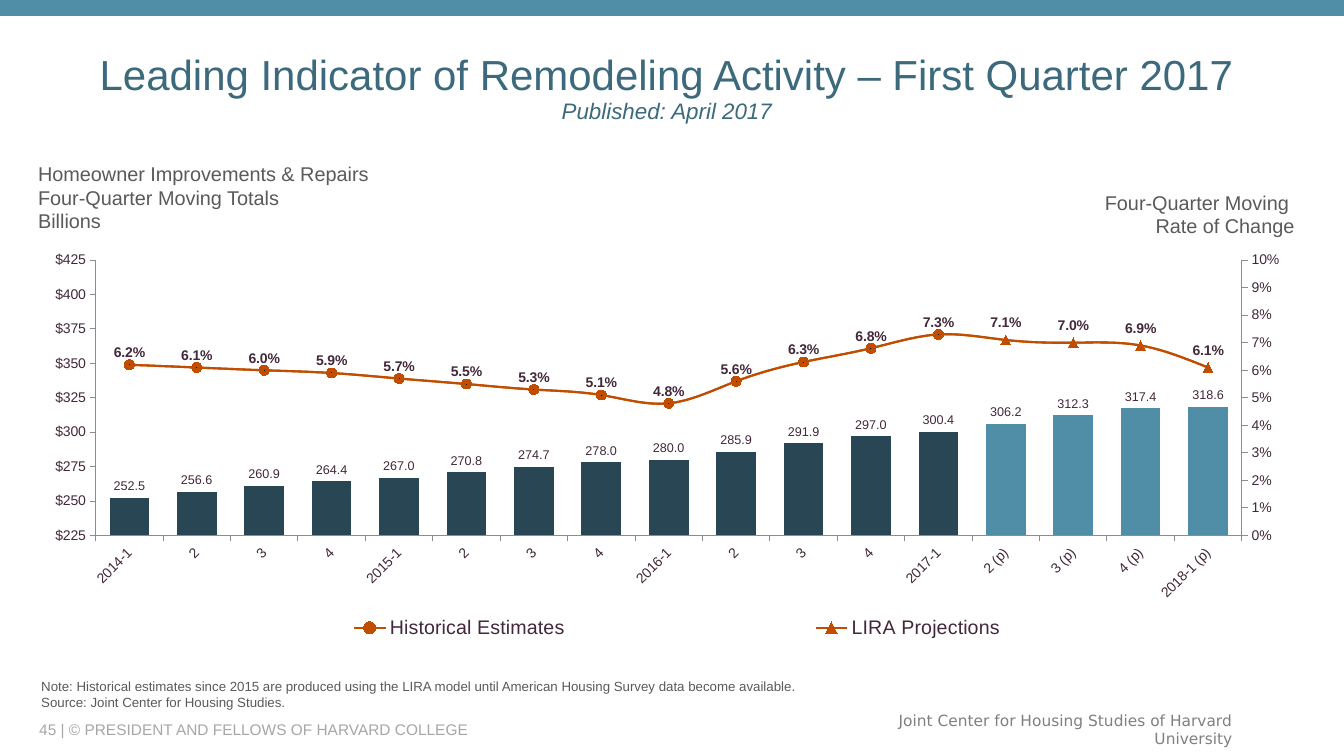
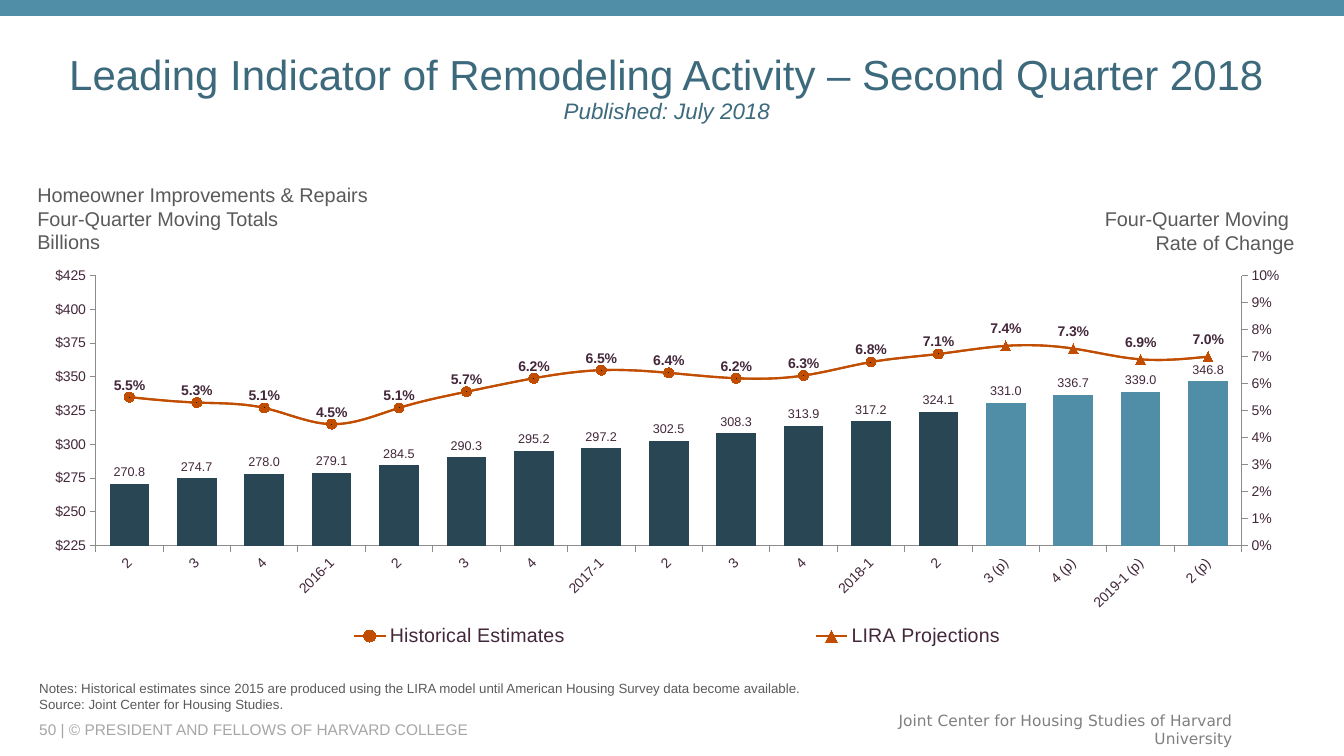
"""Build two slides on the Leading Indicator of Remodeling Activity."""
from pptx import Presentation
from pptx.chart.axis import ValueAxis
from pptx.chart.data import CategoryChartData
from pptx.dml.color import RGBColor
from pptx.enum.chart import (
    XL_CHART_TYPE, XL_LABEL_POSITION, XL_LEGEND_POSITION, XL_MARKER_STYLE, XL_TICK_MARK)
from pptx.enum.shapes import MSO_SHAPE
from pptx.enum.text import MSO_ANCHOR, MSO_AUTO_SIZE, PP_ALIGN
from pptx.oxml import parse_xml
from pptx.oxml.ns import nsdecls
from pptx.util import Cm, Pt

LEFT, CENTER, RIGHT = PP_ALIGN.LEFT, PP_ALIGN.CENTER, PP_ALIGN.RIGHT
TOP, MIDDLE = MSO_ANCHOR.TOP, MSO_ANCHOR.MIDDLE
CIRCLE, TRIANGLE = XL_MARKER_STYLE.CIRCLE, XL_MARKER_STYLE.TRIANGLE
NO_MARKER = XL_MARKER_STYLE.NONE
OUTSIDE = XL_TICK_MARK.OUTSIDE
CLUSTERED = XL_CHART_TYPE.COLUMN_CLUSTERED
ABOVE, OUTSIDE_END = XL_LABEL_POSITION.ABOVE, XL_LABEL_POSITION.OUTSIDE_END
LEGEND_BOTTOM = XL_LEGEND_POSITION.BOTTOM
RECTANGLE = MSO_SHAPE.RECTANGLE
NO_AUTO_SIZE = MSO_AUTO_SIZE.NONE

TEAL = RGBColor(0x50, 0x8D, 0xA6)
TITLE_TEAL = RGBColor(0x3C, 0x6A, 0x7C)
DARK_TEAL = RGBColor(0x28, 0x46, 0x53)
ORANGE = RGBColor(0xC1, 0x4D, 0x00)
PLUM = RGBColor(0x43, 0x27, 0x3A)
TEXT_GREY = RGBColor(0x5A, 0x5A, 0x5A)
AXIS_GREY = RGBColor(0x8C, 0x8C, 0x8C)
FOOTER_GREY = RGBColor(0xA6, 0xA6, 0xA6)
CENTER_GREY = RGBColor(0x80, 0x80, 0x80)

SLIDE_WIDTH, SLIDE_HEIGHT = 33.87, 19.05
MARGIN, CONTENT_WIDTH = 0.74, 32.13
FIRST_PROJECTION = 13
LINE_WIDTH = 1.5
PLOT_AREA = (0.052, 0.04, 0.899, 0.683)
LEGEND_AREA = (0.063, 0.904, 0.89, 0.096)

COPYRIGHT = "© PRESIDENT AND FELLOWS OF HARVARD COLLEGE"
CENTER_NAME = "Joint Center for Housing Studies of Harvard University"
TOTALS_CAPTION = ["Homeowner Improvements & Repairs", "Four-Quarter Moving Totals", "Billions"]
RATE_CAPTION = ["Four-Quarter Moving ", "Rate of Change"]
NOTE = ("Historical estimates since 2015 are produced using the LIRA model "
        "until American Housing Survey data become available.")
SOURCE = "Source: Joint Center for Housing Studies."

SLIDES = [
    {
        "number": 45,
        "title": "Leading Indicator of Remodeling Activity – First Quarter 2017",
        "published": "Published: April 2017",
        "note_label": "Note",
        "totals_at": (0.71, 3.94), "rate_top": 4.67, "note_at": (0.79, 16.97),
        "chart_top": 6.15, "chart_height": 10.16,
        "quarters": ["2014-1", "2", "3", "4", "2015-1", "2", "3", "4", "2016-1", "2", "3", "4",
                     "2017-1", "2 (p)", "3 (p)", "4 (p)", "2018-1 (p)"],
        "totals": [252.5, 256.6, 260.9, 264.4, 267, 270.8, 274.7, 278, 280,
                   285.9, 291.9, 297, 300.4, 306.2, 312.3, 317.4, 318.6],
        "rates": [0.062, 0.061, 0.06, 0.059, 0.057, 0.055, 0.053, 0.051, 0.048,
                  0.056, 0.063, 0.068, 0.073, 0.071, 0.07, 0.069, 0.061],
    },
    {
        "number": 50,
        "title": "Leading Indicator of Remodeling Activity – Second Quarter 2018",
        "published": "Published: July 2018",
        "note_label": "Notes",
        "totals_at": (0.69, 4.47), "rate_top": 5.08, "note_at": (0.74, 17.02),
        "chart_top": 6.55, "chart_height": 9.96,
        "quarters": ["2", "3", "4", "2016-1", "2", "3", "4", "2017-1", "2", "3", "4",
                     "2018-1", "2", "3 (p)", "4 (p)", "2019-1 (p)", "2 (p)"],
        "totals": [270.8, 274.7, 278, 279.1, 284.5, 290.3, 295.2, 297.2, 302.5,
                   308.3, 313.9, 317.2, 324.1, 331, 336.7, 339, 346.8],
        "rates": [0.055, 0.053, 0.051, 0.045, 0.051, 0.057, 0.062, 0.065, 0.064,
                  0.062, 0.063, 0.068, 0.071, 0.074, 0.073, 0.069, 0.07],
    },
]

LINE_CHART = f"""<c:lineChart {nsdecls('c')}>
<c:grouping val="standard"/><c:varyColors val="0"/><c:marker val="1"/>
<c:axId val="5001"/><c:axId val="5002"/></c:lineChart>"""
HIDDEN_AXIS = f"""<c:catAx {nsdecls('c')}><c:axId val="5001"/>
<c:scaling><c:orientation val="minMax"/></c:scaling><c:delete val="1"/>
<c:axPos val="b"/><c:crossAx val="5002"/><c:crosses val="autoZero"/></c:catAx>"""
RATE_AXIS = f"""<c:valAx {nsdecls('c')}><c:axId val="5002"/>
<c:scaling><c:orientation val="minMax"/></c:scaling><c:delete val="0"/>
<c:axPos val="r"/><c:majorTickMark val="out"/><c:minorTickMark val="none"/>
<c:tickLblPos val="nextTo"/><c:crossAx val="5001"/><c:crosses val="max"/></c:valAx>"""
HIDDEN_ENTRY = f"""<c:legendEntry {nsdecls('c')}><c:idx val="0"/><c:delete val="1"/></c:legendEntry>"""


def set_font(font, size, color, name="Arial", bold=False, italic=False):
    font.size, font.name, font.bold, font.italic = Pt(size), name, bold, italic
    font.color.rgb = color


def write_text(frame, lines, size=14.2, color=TEXT_GREY, name="Arial", align=LEFT,
               anchor=TOP, spacing=None):
    frame.word_wrap = True
    frame.auto_size = NO_AUTO_SIZE
    frame.vertical_anchor = anchor
    for index, line in enumerate(lines):
        paragraph = frame.add_paragraph() if index else frame.paragraphs[0]
        paragraph.alignment = align
        if spacing:
            paragraph.line_spacing = spacing
        run = paragraph.add_run()
        run.text = line
        set_font(run.font, size, color, name)


def add_text(slide, box, lines, **style):
    write_text(slide.shapes.add_textbox(*map(Cm, box)).text_frame, lines, **style)


def layout_xml(area, inner=False):
    target = '<c:layoutTarget val="inner"/>' if inner else ""
    modes = "".join(f'<c:{side}Mode val="edge"/>' for side in "xy")
    sizes = "".join(f'<c:{key} val="{value}"/>' for key, value in zip("xywh", area))
    return parse_xml(f"<c:layout {nsdecls('c')}><c:manualLayout>{target}{modes}{sizes}"
                     "</c:manualLayout></c:layout>")


def replace_layout(parent, layout, position):
    for old_layout in parent.xpath("c:layout"):
        parent.remove(old_layout)
    parent.insert(position, layout)


def format_axis(axis):
    axis.has_major_gridlines = False
    axis.major_tick_mark = OUTSIDE
    axis.format.line.color.rgb = AXIS_GREY
    axis.format.line.width = Pt(0.75)
    set_font(axis.tick_labels.font, 10, PLUM)


def format_value_axis(axis, minimum, maximum, step, number_format):
    format_axis(axis)
    axis.minimum_scale, axis.maximum_scale, axis.major_unit = minimum, maximum, step
    axis.tick_labels.number_format = number_format
    axis.tick_labels.number_format_is_linked = False


def format_labels(labels, size, number_format, position, bold=False):
    labels.show_value = True
    labels.number_format = number_format
    labels.number_format_is_linked = False
    labels.position = position
    set_font(labels.font, size, PLUM, bold=bold)


def format_stroke(line):
    line.color.rgb = ORANGE
    line.width = Pt(LINE_WIDTH)


def format_line(series, marker, unmarked):
    series.smooth = True
    format_stroke(series.format.line)
    series.marker.style = marker
    series.marker.size = 7
    series.marker.format.fill.solid()
    series.marker.format.fill.fore_color.rgb = ORANGE
    series.marker.format.line.color.rgb = ORANGE
    for index in unmarked:
        point = series.points[index]
        point.marker.style = NO_MARKER
        format_stroke(point.format.line)


def move_rates_to_lines(plot_area):
    """Put the second and third series on a line plot with a right axis."""
    bar_chart = plot_area.xpath("c:barChart")[0]
    line_chart = parse_xml(LINE_CHART)
    bar_chart.addnext(line_chart)
    for series in bar_chart.xpath("c:ser")[1:]:
        for element in series.xpath("c:invertIfNegative"):
            series.remove(element)
        line_chart.xpath("c:marker")[0].addprevious(series)
    total_axis, rate_axis = plot_area.xpath("c:valAx")[0], parse_xml(RATE_AXIS)
    total_axis.addnext(rate_axis)
    rate_axis.addnext(parse_xml(HIDDEN_AXIS))
    return ValueAxis(total_axis), ValueAxis(rate_axis)


def add_remodeling_chart(slide, content):
    data = CategoryChartData()
    data.categories = content["quarters"]
    data.add_series("Series 1", content["totals"])
    for name in ("Historical Estimates", "LIRA Projections"):
        data.add_series(name, content["rates"], number_format="0.0%")
    box = MARGIN, content["chart_top"], CONTENT_WIDTH, content["chart_height"]
    chart = slide.shapes.add_chart(CLUSTERED, *map(Cm, box), data).chart
    chart.has_title = False
    set_font(chart.font, 12, PLUM)

    plot_area = chart.element.xpath("c:chart/c:plotArea")[0]
    total_axis, rate_axis = move_rates_to_lines(plot_area)
    replace_layout(plot_area, layout_xml(PLOT_AREA, inner=True), 0)
    format_axis(chart.category_axis)
    plot_area.xpath("c:catAx/c:txPr/a:bodyPr")[0].set("rot", "-2700000")
    format_value_axis(total_axis, 225, 425, 25, '"$"#,##0')
    format_value_axis(rate_axis, 0, 0.1, 0.01, "0%")

    bars, lines = chart.plots
    bars.gap_width = 70
    bars.vary_by_categories = False
    totals = bars.series[0]
    totals.format.fill.solid()
    totals.format.fill.fore_color.rgb = DARK_TEAL
    projected = range(FIRST_PROJECTION, len(content["quarters"]))
    for index in projected:
        fill = totals.points[index].format.fill
        fill.solid()
        fill.fore_color.rgb = TEAL
    format_labels(totals.data_labels, 9, "#,##0.0", OUTSIDE_END)

    historical, projections = lines.series
    format_line(historical, CIRCLE, projected)
    format_line(projections, TRIANGLE, range(FIRST_PROJECTION))
    format_labels(projections.data_labels, 10, "0.0%", ABOVE, bold=True)

    chart.has_legend = True
    chart.legend.position = LEGEND_BOTTOM
    chart.legend.include_in_layout = False
    set_font(chart.legend.font, 14, PLUM)
    legend = chart.element.xpath("c:chart/c:legend")[0]
    replace_layout(legend, layout_xml(LEGEND_AREA), 1)
    legend.insert(1, parse_xml(HIDDEN_ENTRY))


def add_frame(slide, number):
    band = slide.shapes.add_shape(RECTANGLE, 0, 0, Cm(SLIDE_WIDTH), Cm(0.4))
    band.shadow.inherit = False
    band.fill.solid()
    band.fill.fore_color.rgb = TEAL
    band.line.fill.background()
    add_text(slide, (MARGIN, 18.12, 20.12, 0.51), [f"{number} | {COPYRIGHT}"],
             size=11, color=FOOTER_GREY, anchor=MIDDLE)
    add_text(slide, (21.4, 18.01, 9.91, 0.74), [CENTER_NAME], size=11,
             color=CENTER_GREY, name="DejaVu Sans", align=RIGHT, anchor=MIDDLE)


def add_title(slide, title, published):
    shape = slide.shapes.title
    shape.left, shape.top, shape.width, shape.height = map(Cm, (MARGIN, 1.02, CONTENT_WIDTH, 2.46))
    write_text(shape.text_frame, [title, published], size=30, color=TITLE_TEAL,
               align=CENTER, anchor=MIDDLE, spacing=0.9)
    set_font(shape.text_frame.paragraphs[1].runs[0].font, 16, TITLE_TEAL, italic=True)


def main():
    presentation = Presentation()
    presentation.slide_width, presentation.slide_height = Cm(SLIDE_WIDTH), Cm(SLIDE_HEIGHT)
    for content in SLIDES:
        slide = presentation.slides.add_slide(presentation.slide_layouts[5])
        add_frame(slide, content["number"])
        add_title(slide, content["title"], content["published"])
        add_remodeling_chart(slide, content)
        add_text(slide, (*content["totals_at"], 12.55, 2.08), TOTALS_CAPTION)
        add_text(slide, (25.1, content["rate_top"], 7.77, 1.47), RATE_CAPTION, align=RIGHT)
        add_text(slide, (*content["note_at"], 28.93, 1.07),
                 [f"{content['note_label']}: {NOTE}", SOURCE], size=9.5)
    presentation.save("out.pptx")


if __name__ == "__main__":
    main()
